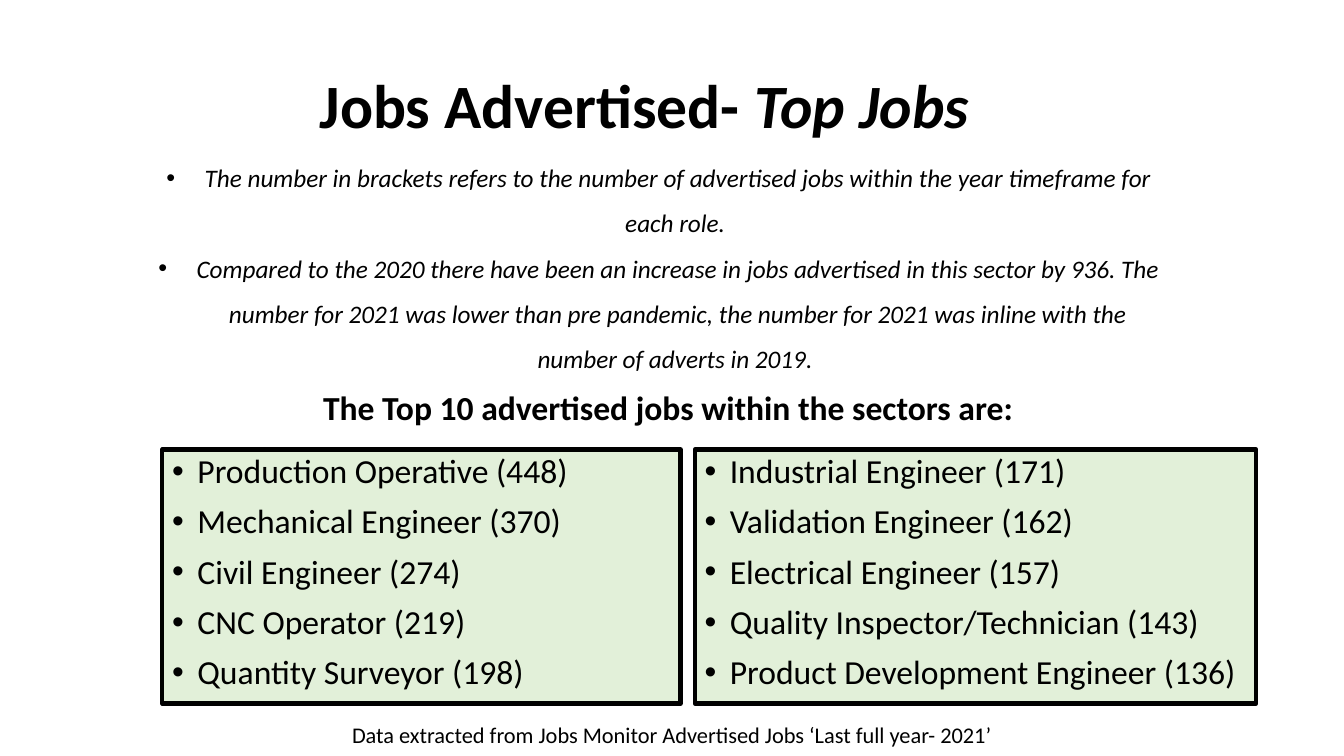
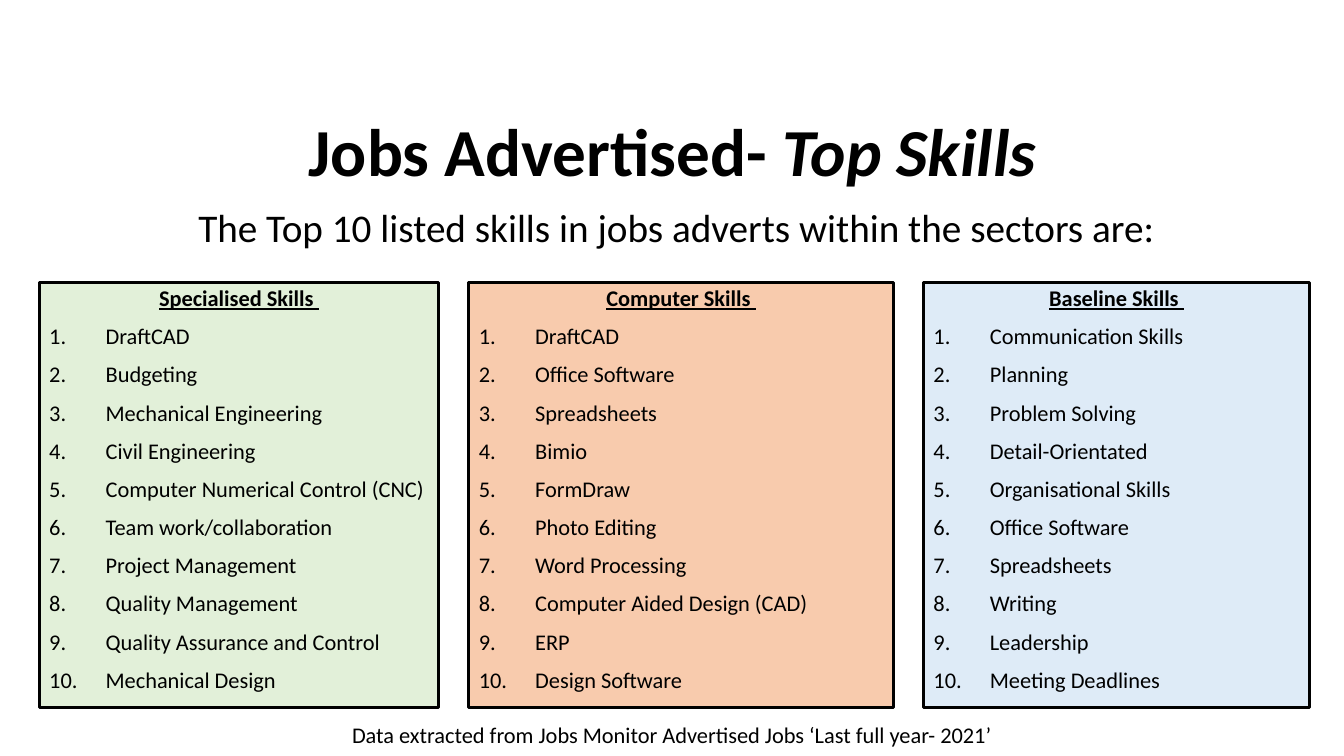
from lxml.etree import SubElement
from pptx import Presentation
from pptx.dml.color import RGBColor
from pptx.enum.shapes import MSO_SHAPE as Shape
from pptx.enum.text import MSO_ANCHOR as Anchor, MSO_AUTO_SIZE as AutoSize, PP_ALIGN as Align
from pptx.oxml.ns import qn
from pptx.util import Inches, Pt

COLOURS = {
    "text": "000000",
    "line": "000000",
    "green": "E2F0D9",
    "orange": "F8CBAD",
    "blue": "DEEBF7",
}
FONT = "Calibri"
TITLE_ONLY = 5
SLIDE_WIDTH, SLIDE_HEIGHT = 13.33, 7.5
SOURCE_NOTE = "Data extracted from Jobs Monitor Advertised Jobs ‘Last full year- 2021’"


def colour(name):
    return RGBColor.from_string(COLOURS[name])


class SlideBuilder:
    """Holds the shared style and the slide being built."""

    def __init__(self):
        self.deck = Presentation()
        self.deck.slide_width = Inches(SLIDE_WIDTH)
        self.deck.slide_height = Inches(SLIDE_HEIGHT)
        self.page = None

    # Text helpers
    def format_span(self, span, **formats):
        for name, value in {"name": FONT, **formats}.items():
            setattr(span.font, name, value)
        span.font.color.rgb = colour("text")

    def add_paragraph(self, frame, text, marker=None, indent=0, formats=None, **layout):
        first = not frame.paragraphs[0].runs
        para = frame.paragraphs[0] if first else frame.add_paragraph()
        if first:
            layout["space_before"] = Pt(0)
        for name, value in layout.items():
            setattr(para, name, value)
        if marker:
            props = para._p.get_or_add_pPr()
            props.set("marL", str(Inches(indent)))
            props.set("indent", str(-Inches(indent)))
            if marker == "number":
                SubElement(props, qn("a:buAutoNum"), type="arabicPeriod")
            else:
                SubElement(props, qn("a:buFont"), typeface="Arial")
                SubElement(props, qn("a:buChar"), char=marker)
        span = para.add_run()
        span.text = text
        self.format_span(span, **(formats or {}))

    # Slide with its title and source note
    def start_slide(self, topic, left, top, size):
        self.page = self.deck.slides.add_slide(self.deck.slide_layouts[TITLE_ONLY])
        title = self.page.shapes.title
        place = {"left": left, "top": top, "width": 11.5, "height": 1.45}
        for name, value in place.items():
            setattr(title, name, Inches(value))
        frame = title.text_frame
        frame.auto_size = AutoSize.NONE
        frame.vertical_anchor = Anchor.MIDDLE
        para = frame.paragraphs[0]
        para.alignment, para.line_spacing = Align.CENTER, 0.9
        for text, italic in (("Jobs Advertised- ", False), (topic, True)):
            span = para.add_run()
            span.text = text
            self.format_span(span, size=Pt(size), bold=True, italic=italic)
        self.text([SOURCE_NOTE], 0, 7.11, SLIDE_WIDTH, 0.37, {"size": Pt(16)})

    # Centred text
    def text(self, lines, left, top, width, height, formats, **layout):
        box = self.page.shapes.add_textbox(*map(Inches, (left, top, width, height)))
        box.text_frame.word_wrap = True
        for line in lines:
            self.add_paragraph(box.text_frame, line, formats=formats,
                               alignment=Align.CENTER, **layout)

    # Filled panel with an optional heading above a list
    def panel(self, items, left, top, width, height, fill, border, size,
              marker, indent, heading=None):
        box = self.page.shapes.add_shape(
            Shape.RECTANGLE, *map(Inches, (left, top, width, height)))
        box.shadow.inherit = False
        box.fill.solid()
        box.fill.fore_color.rgb = colour(fill)
        box.line.color.rgb = colour("line")
        box.line.width = Pt(border)
        frame = box.text_frame
        frame.word_wrap = True
        frame.vertical_anchor = Anchor.TOP
        spacing = {"line_spacing": 0.9, "space_before": Pt(10)}
        if heading:
            self.add_paragraph(frame, heading, alignment=Align.CENTER, **spacing,
                               formats={"size": Pt(size), "bold": True, "underline": True})
        for item in items:
            self.add_paragraph(frame, item, marker, indent, {"size": Pt(size)},
                               alignment=Align.LEFT, **spacing)

    # Row of panels with equal gaps
    def panel_row(self, panels, left, gap, **style):
        for width, panel in panels:
            self.panel(left=left, width=width, **panel, **style)
            left += width + gap


TOP_JOBS = [
    (5.14, {"items": ["Production Operative (448)", "Mechanical Engineer (370)",
                      "Civil Engineer (274)", "CNC Operator (219)",
                      "Quantity Surveyor (198)"]}),
    (5.57, {"items": ["Industrial Engineer (171)", "Validation Engineer (162)",
                      "Electrical Engineer (157)", "Quality Inspector/Technician (143)",
                      "Product Development Engineer (136)"]}),
]
JOB_NOTES = [
    "The number in brackets refers to the number of advertised jobs within the year "
    "timeframe for each role. ",
    "Compared to the 2020 there have been an increase in jobs advertised in this sector "
    "by 936. The number for 2021 was lower than pre pandemic, the number for 2021 was "
    "inline with the number of adverts in 2019. ",
]
TOP_SKILLS = [
    (3.96, {"heading": "Specialised Skills ", "fill": "green", "items": [
        "DraftCAD", "Budgeting", "Mechanical Engineering", "Civil Engineering",
        "Computer Numerical Control (CNC)", "Team work/collaboration",
        "Project Management", "Quality Management", "Quality Assurance and Control",
        "Mechanical Design"]}),
    (4.21, {"heading": "Computer Skills ", "fill": "orange", "items": [
        "DraftCAD", "Office Software", "Spreadsheets", "Bimio", "FormDraw",
        "Photo Editing", "Word Processing", "Computer Aided Design (CAD)", "ERP",
        "Design Software"]}),
    (3.83, {"heading": "Baseline Skills ", "fill": "blue", "items": [
        "Communication Skills", "Planning", "Problem Solving", "Detail-Orientated",
        "Organisational Skills", "Office Software", "Spreadsheets", "Writing",
        "Leadership", "Meeting Deadlines"]}),
]


def main():
    builder = SlideBuilder()

    # Top jobs
    builder.start_slide("Top Jobs", left=0.64, top=0.35, size=44)
    builder.text(JOB_NOTES, 1.4, 1.41, 10.27, 2.37,
                 {"size": Pt(18), "italic": True},
                 marker="•", indent=0.38, line_spacing=1.5)
    builder.text(["The Top 10 advertised jobs within the sectors are: "],
                 0, 3.79, SLIDE_WIDTH, 0.5, {"size": Pt(24), "bold": True})
    builder.panel_row(TOP_JOBS, left=1.61, gap=0.14, top=4.46, height=2.52,
                      fill="green", border=3, size=24, marker="•", indent=0.25)

    # Top skills
    builder.start_slide("Top Skills", left=0.92, top=0.81, size=48)
    builder.text(["The Top 10 listed skills in jobs adverts within the sectors are: "],
                 1.06, 1.97, 11.38, 0.57, {"size": Pt(28)})
    builder.panel_row(TOP_SKILLS, left=0.39, gap=0.3, top=2.8, height=4.22,
                      border=2.25, size=16, marker="number", indent=0.56)

    builder.deck.save("out.pptx")


if __name__ == "__main__":
    main()
